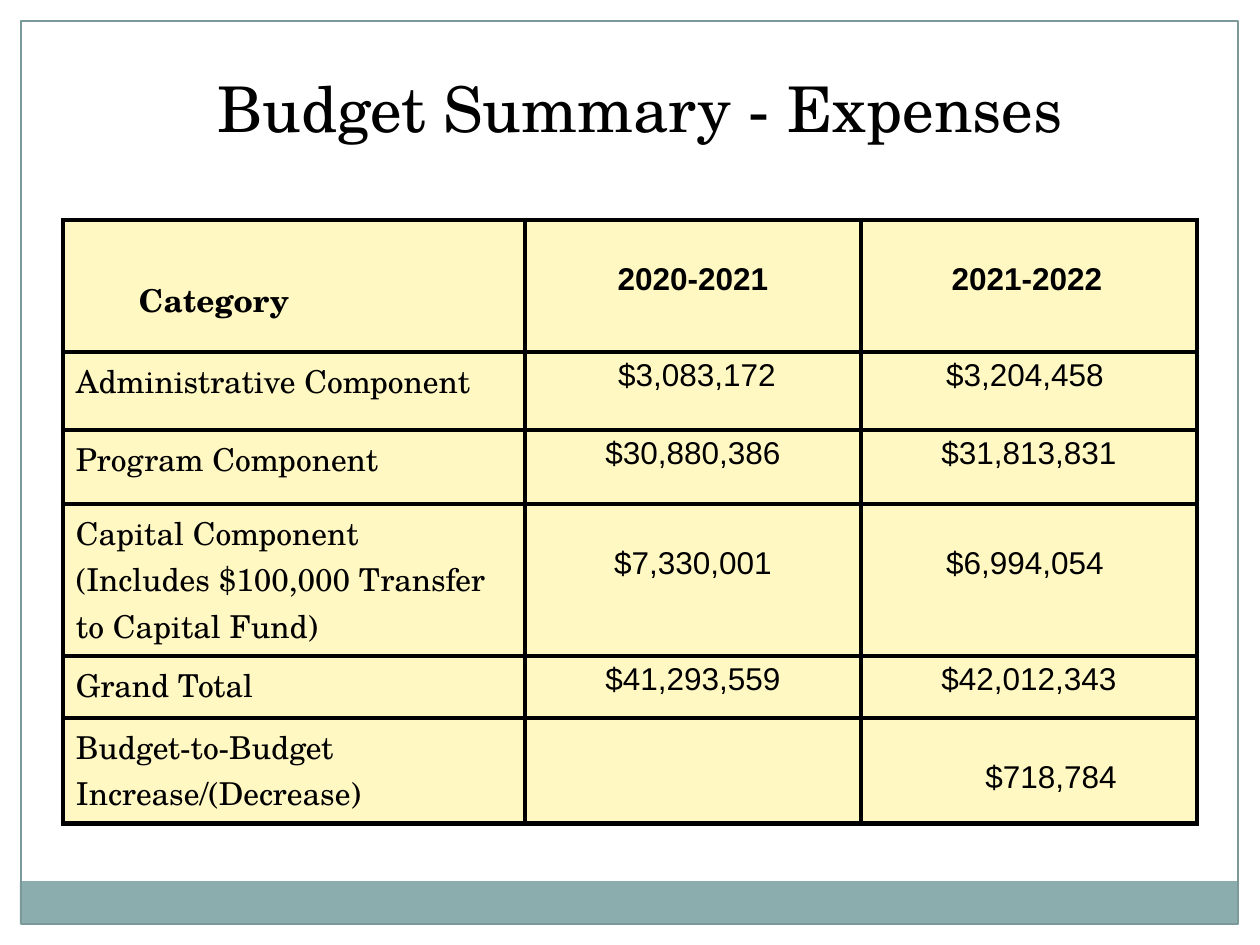
from dataclasses import dataclass

from lxml.etree import SubElement
from pptx import Presentation
from pptx.dml.color import RGBColor
from pptx.enum.shapes import MSO_SHAPE as Shape
from pptx.enum.text import MSO_ANCHOR as Anchor, PP_ALIGN as Align
from pptx.oxml.ns import qn
from pptx.util import Emu, Pt

PX_PER_INCH = 126
PAGE_WIDTH, PAGE_HEIGHT, EDGE = 1260, 945, 21
SERIF, SANS = "TeX Gyre Schola", "Arial"
BLACK, WHITE, CREAM, TEAL, FRAME = "000000", "FFFFFF", "FFF8C2", "8CADAE", "7C999A"
INSET_X, INSET_Y = 13, 6
COLUMN_WIDTHS = (462, 336, 336)


@dataclass(frozen=True)
class Entry:
    """Cell text, moved down by drop and sideways by shift (both px)."""
    text: str
    drop: int = 0
    shift: int = 0


@dataclass(frozen=True)
class BudgetRow:
    height: int
    entries: tuple[Entry, Entry, Entry]
    bold: bool = False


@dataclass(frozen=True)
class Panel:
    left: int
    top: int
    width: int
    height: int
    fill: str | None = None
    line: str | None = None


PANELS = (
    Panel(0, 0, PAGE_WIDTH, EDGE, fill=WHITE),
    Panel(PAGE_WIDTH - EDGE, 0, EDGE, PAGE_HEIGHT, fill=WHITE),
    Panel(0, 0, EDGE, PAGE_HEIGHT, fill=WHITE),
    Panel(20, 881, 1217, 43, fill=TEAL),
    Panel(EDGE, EDGE, 1217, 903, line=FRAME),
)

ROWS = (
    BudgetRow(132, (Entry("Category", 50, 63), Entry("2020-2021", 36),
                    Entry("2021-2022", 36, -2)), bold=True),
    BudgetRow(78, (Entry("Administrative Component"),
                   Entry("$3,083,172", shift=4), Entry("$3,204,458", shift=-4))),
    BudgetRow(74, (Entry("Program Component"),
                   Entry("$30,880,386"), Entry("$31,813,831"))),
    BudgetRow(152, (Entry("Capital Component\n(Includes $100,000 Transfer to Capital Fund)"),
                    Entry("$7,330,001", 36), Entry("$6,994,054", 36, -4))),
    BudgetRow(62, (Entry("Grand Total"),
                   Entry("$41,293,559"), Entry("$42,012,343"))),
    BudgetRow(106, (Entry("Budget-to-Budget Increase/(Decrease)"),
                    Entry(""), Entry("$718,784", 36, 22))),
)


def px(length: int) -> Emu:
    return Emu(round(length * 914400 / PX_PER_INCH))


def color(value: str) -> RGBColor:
    return RGBColor.from_string(value)


def style_text(frame, font_name: str, size: int, align: Align, bold: bool = False) -> None:
    for para in frame.paragraphs:
        para.alignment = align
        for span in para.runs:
            font = span.font
            font.name, font.size, font.bold = font_name, Pt(size), bold
            font.color.rgb = color(BLACK)


def add_border(cell, width: int = 3) -> None:
    properties = cell._tc.get_or_add_tcPr()
    for index, side in enumerate(("lnL", "lnR", "lnT", "lnB")):
        line = SubElement(properties, qn(f"a:{side}"), w=str(Pt(width)))
        properties.insert(index, line)
        fill = SubElement(line, qn("a:solidFill"))
        SubElement(fill, qn("a:srgbClr"), val=BLACK)


def fill_cell(cell, entry: Entry, is_label: bool, bold: bool) -> None:
    cell.fill.solid()
    cell.fill.fore_color.rgb = color(CREAM)
    add_border(cell)
    # Centred text moves by half of the extra margin.
    factor = 1 if is_label else 2
    cell.margin_left = px(INSET_X + factor * max(entry.shift, 0))
    cell.margin_right = px(INSET_X + factor * max(-entry.shift, 0))
    cell.margin_top, cell.margin_bottom = px(INSET_Y + entry.drop), px(INSET_Y)
    cell.vertical_anchor = Anchor.TOP
    cell.text_frame.text = entry.text
    style_text(cell.text_frame, SERIF if is_label else SANS, 18,
               Align.LEFT if is_label else Align.CENTER, bold)


def add_budget_table(slide) -> None:
    table = slide.shapes.add_table(
        len(ROWS), len(COLUMN_WIDTHS), px(63), px(220),
        px(sum(COLUMN_WIDTHS)), px(sum(row.height for row in ROWS))).table
    for column, width in zip(table.columns, COLUMN_WIDTHS):
        column.width = px(width)
    for row_index, row in enumerate(ROWS):
        table.rows[row_index].height = px(row.height)
        for column_index, entry in enumerate(row.entries):
            fill_cell(table.cell(row_index, column_index), entry,
                      column_index == 0, row.bold)


def add_panel(slide, panel: Panel) -> None:
    box = slide.shapes.add_shape(Shape.RECTANGLE, px(panel.left), px(panel.top),
                                 px(panel.width), px(panel.height))
    box.shadow.inherit = False
    if panel.fill:
        box.fill.solid()
        box.fill.fore_color.rgb = color(panel.fill)
    else:
        box.fill.background()
    if panel.line:
        box.line.color.rgb = color(panel.line)
        box.line.width = Pt(0.75)
    else:
        box.line.fill.background()


def set_title(slide, text: str) -> None:
    title = slide.shapes.title
    title.left, title.top, title.width, title.height = px(73), px(63), px(1134), px(136)
    frame = title.text_frame
    frame.text = text
    frame.word_wrap = True
    frame.vertical_anchor = Anchor.TOP
    style_text(frame, SERIF, 36, Align.CENTER)


def main() -> None:
    deck = Presentation()
    deck.slide_width, deck.slide_height = px(PAGE_WIDTH), px(PAGE_HEIGHT)
    slide = deck.slides.add_slide(deck.slide_layouts[5])
    for panel in PANELS:
        add_panel(slide, panel)
    set_title(slide, "Budget Summary - Expenses")
    add_budget_table(slide)
    deck.save("out.pptx")


if __name__ == "__main__":
    main()
